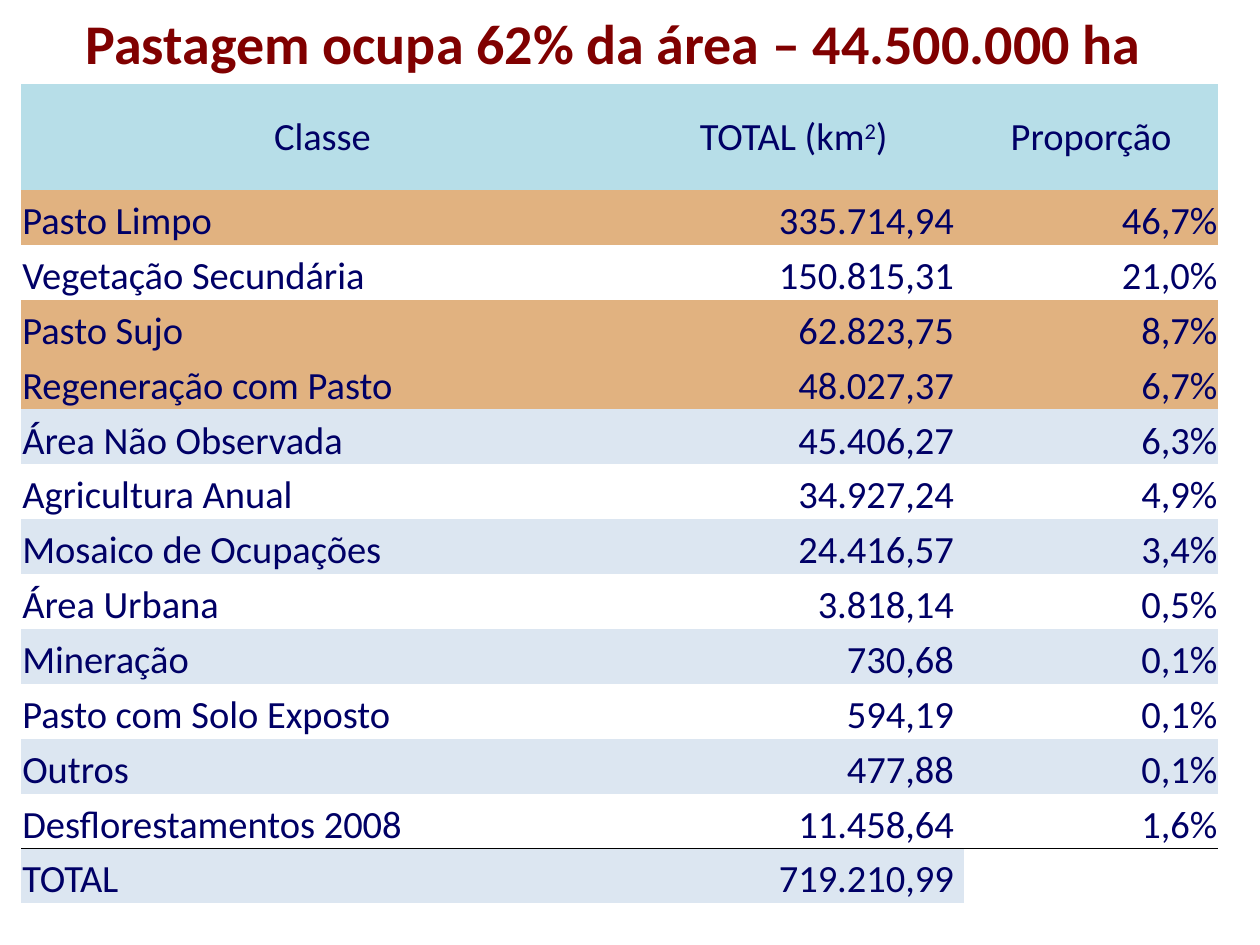
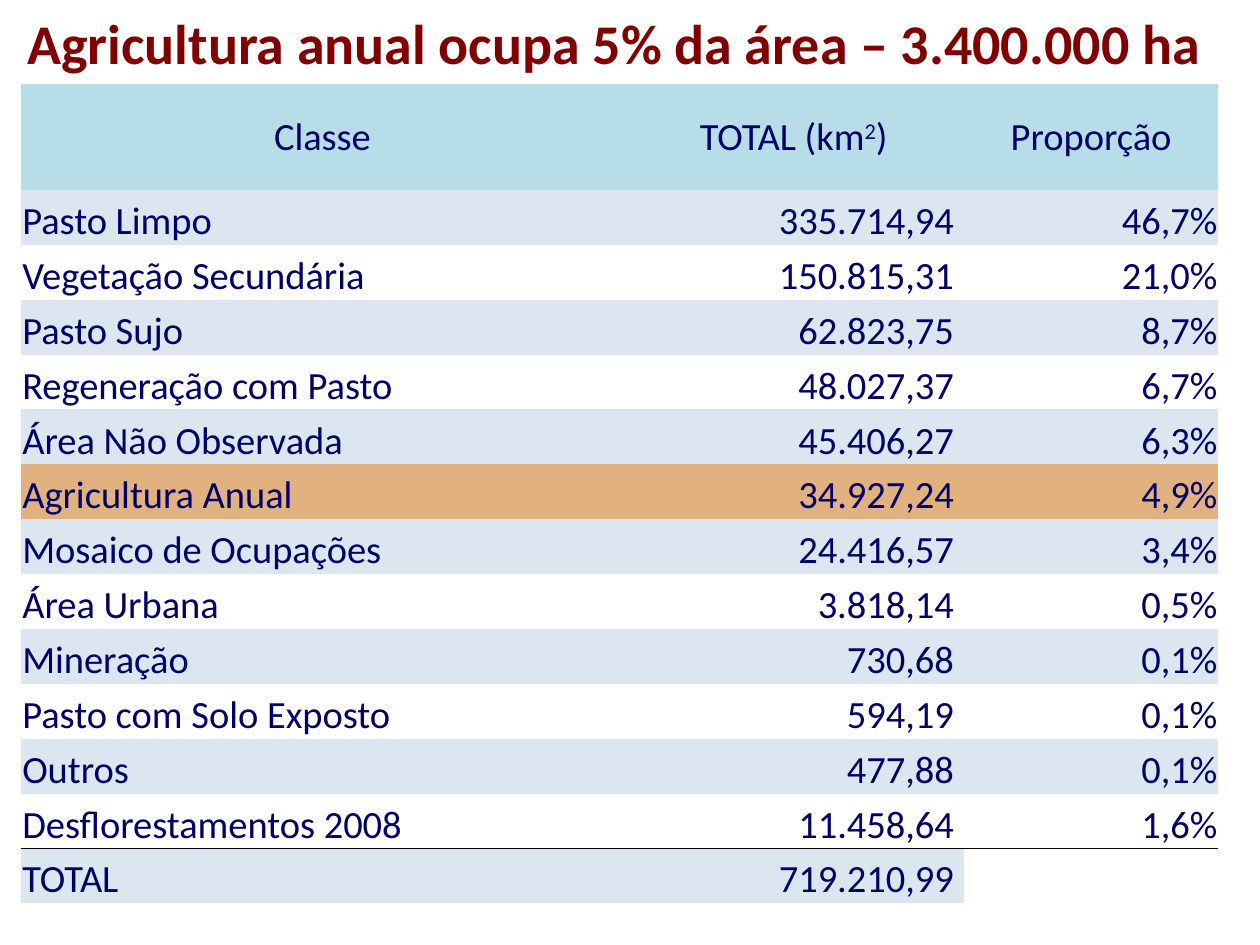
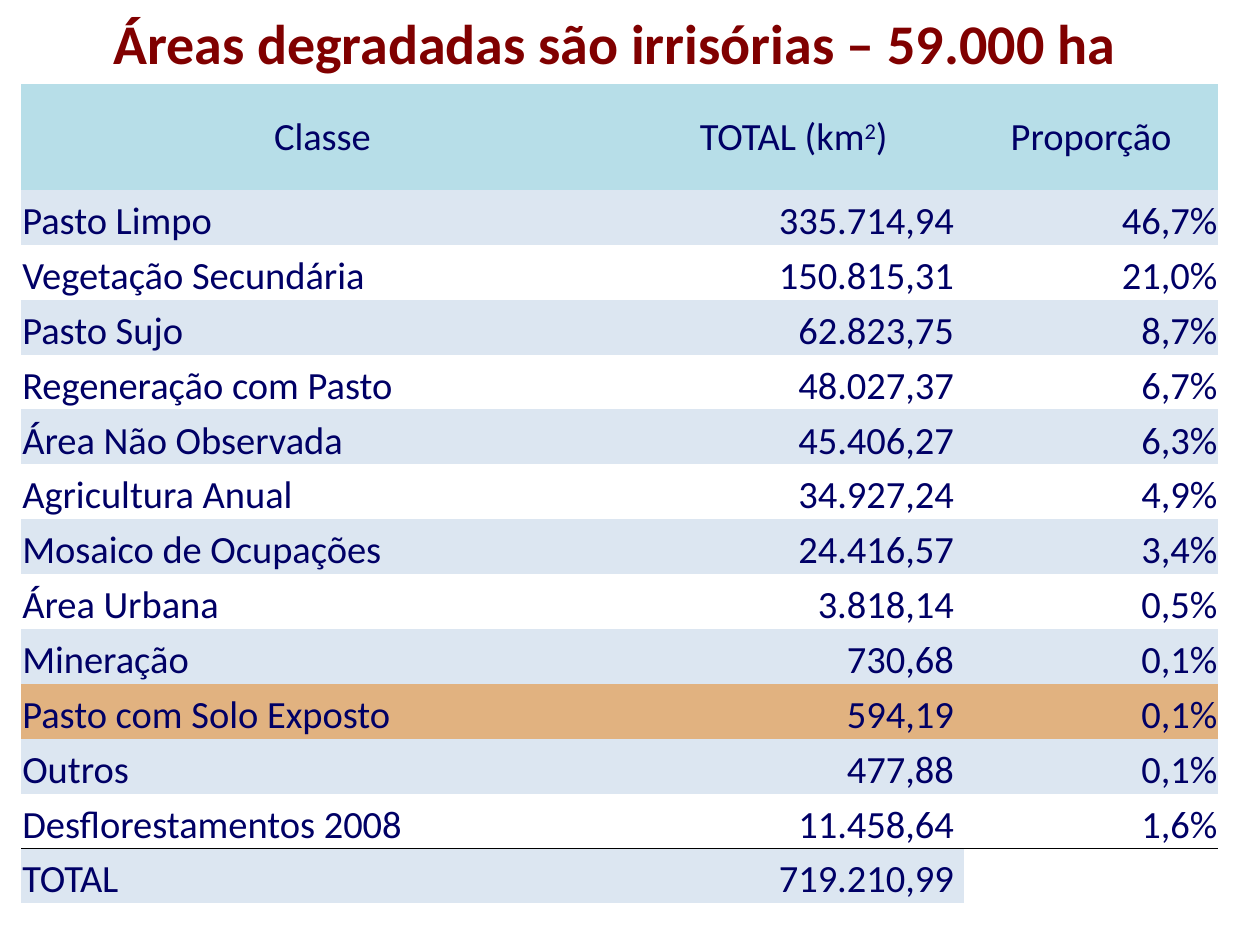
from lxml.etree import fromstring
from pptx import Presentation
from pptx.dml.color import RGBColor
from pptx.enum.text import MSO_ANCHOR as Anchor, MSO_AUTO_SIZE as AutoSize, PP_ALIGN as Align
from pptx.oxml.ns import qn
from pptx.util import Cm, Pt

FONT = "Calibri"
TITLE_RED = "800000"
TEXT_NAVY = "000066"
HEADER_BLUE = "B7DEE8"
BAND_BLUE = "DCE6F1"
HIGHLIGHT = "E1B280"
PLAIN_STYLE = "{2D5ABB26-0587-4C30-8999-92F81FD0307C}"
RULE_XML = (
    '<a:{side} xmlns:a="http://schemas.openxmlformats.org/drawingml/2006/main" w="12700">'
    '<a:solidFill><a:srgbClr val="000000"/></a:solidFill></a:{side}>'
)

HEADINGS = [["Classe"], ["TOTAL (km", "2", ")"], ["Proporção"]]
CLASSES = [
    ("Pasto Limpo", "335.714,94", "46,7%"),
    ("Vegetação Secundária", "150.815,31", "21,0%"),
    ("Pasto Sujo", "62.823,75", "8,7%"),
    ("Regeneração com Pasto", "48.027,37", "6,7%"),
    ("Área Não Observada", "45.406,27", "6,3%"),
    ("Agricultura Anual", "34.927,24", "4,9%"),
    ("Mosaico de Ocupações", "24.416,57", "3,4%"),
    ("Área Urbana", "3.818,14", "0,5%"),
    ("Mineração", "730,68", "0,1%"),
    ("Pasto com Solo Exposto", "594,19", "0,1%"),
    ("Outros", "477,88", "0,1%"),
    ("Desflorestamentos 2008", "11.458,64", "1,6%"),
    ("TOTAL", "719.210,99", ""),
]
ROWS = [HEADINGS] + [[[text] if text else [] for text in row] for row in CLASSES]
TOTAL_ROW = len(CLASSES)
COLUMN_WIDTHS = [12.14, 6.86, 5.13]
COLUMN_ALIGNS = [Align.LEFT, Align.RIGHT, Align.RIGHT]
RIGHT_INSETS = [0.02, 0.2, 0.02]
TABLE_HEIGHT = 16.51
HEADER_HEIGHT = 2.13

SLIDES = [
    ("Pastagem ocupa 62% da área – 44.500.000 ha", 1.47, 22.05,
     {"Pasto Limpo", "Pasto Sujo", "Regeneração com Pasto"}),
    ("Agricultura anual ocupa 5% da área – 3.400.000 ha", 0.3, 24.43, {"Agricultura Anual"}),
    ("Áreas degradadas são irrisórias – 59.000 ha", 1.75, 21.54, {"Pasto com Solo Exposto"}),
]


def color(value):
    return RGBColor.from_string(value)


def add_run(paragraph, text, size, ink, bold=False):
    run = paragraph.add_run()
    run.text = text
    run.font.name = FONT
    run.font.size = Pt(size)
    run.font.bold = bold
    run.font.color.rgb = color(ink)
    return run


prs = Presentation()
prs.slide_width, prs.slide_height = Cm(25.4), Cm(19.05)

for headline, left, width, highlighted in SLIDES:
    slide = prs.slides.add_slide(prs.slide_layouts[6])

    land_use = slide.shapes.add_table(
        len(ROWS), len(COLUMN_WIDTHS), Cm(0.43), Cm(1.7), Cm(sum(COLUMN_WIDTHS)), Cm(TABLE_HEIGHT)
    ).table
    land_use.first_row = land_use.horz_banding = False
    land_use._tbl.tblPr.find(qn("a:tableStyleId")).text = PLAIN_STYLE
    for column, column_width in zip(land_use.columns, COLUMN_WIDTHS):
        column.width = Cm(column_width)
    for row in land_use.rows:
        row.height = Cm((TABLE_HEIGHT - HEADER_HEIGHT) / len(CLASSES))
    land_use.rows[0].height = Cm(HEADER_HEIGHT)

    for r, texts in enumerate(ROWS):
        for c, pieces in enumerate(texts):
            cell = land_use.cell(r, c)
            cell.margin_left = cell.margin_top = Cm(0.02)
            cell.margin_right = Cm(RIGHT_INSETS[c] if r else 0.02)
            cell.margin_bottom = 0
            cell.vertical_anchor = Anchor.BOTTOM if r else Anchor.MIDDLE
            paragraph = cell.text_frame.paragraphs[0]
            paragraph.alignment = COLUMN_ALIGNS[c] if r else Align.CENTER
            for piece in pieces:
                run = add_run(paragraph, piece, 22, TEXT_NAVY)
                if piece == "2":
                    run.font._element.set("baseline", "30000")

            if r == 0:
                fill = HEADER_BLUE
            elif texts[0][0] in highlighted:
                fill = HIGHLIGHT
            else:
                fill = BAND_BLUE if r % 2 and pieces else None
            if fill:
                cell.fill.solid()
                cell.fill.fore_color.rgb = color(fill)
            else:
                cell.fill.background()
            if r >= TOTAL_ROW - 1:
                side = "lnT" if r == TOTAL_ROW else "lnB"
                cell._tc.get_or_add_tcPr().insert(0, fromstring(RULE_XML.format(side=side)))

    title = slide.shapes.add_textbox(Cm(left), Cm(0.05), Cm(width), Cm(1.62)).text_frame
    title.word_wrap = False
    title.auto_size = AutoSize.SHAPE_TO_FIT_TEXT
    title.margin_right = Cm(0.5)
    title.paragraphs[0].alignment = Align.CENTER
    add_run(title.paragraphs[0], headline, 32, TITLE_RED, bold=True)

prs.save("out.pptx")
